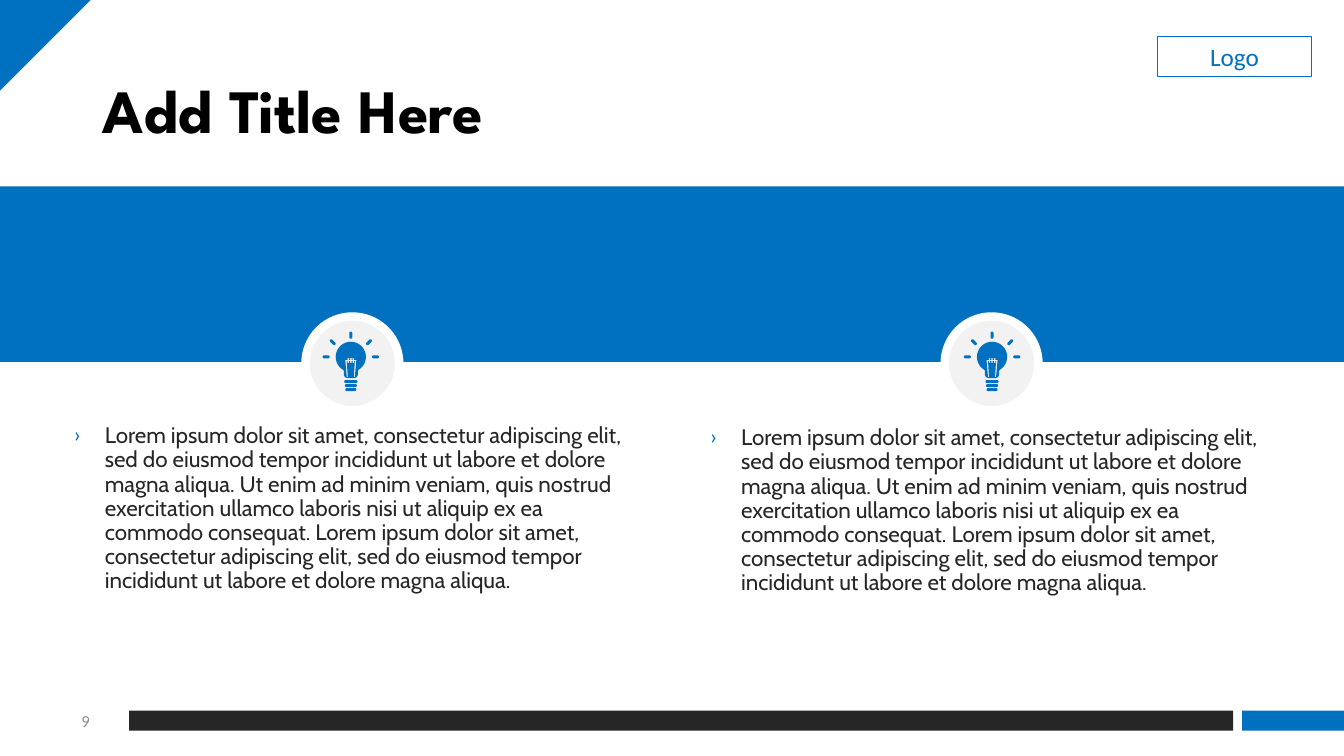
from math import cos, radians, sin

from lxml.etree import SubElement
from pptx import Presentation
from pptx.dml.color import RGBColor
from pptx.enum.shapes import MSO_SHAPE
from pptx.enum.text import MSO_ANCHOR, MSO_AUTO_SIZE, PP_ALIGN
from pptx.oxml.ns import qn
from pptx.util import Inches, Pt

BLUE, DARK, PALE, WHITE = "0070C0", "262626", "F2F2F2", "FFFFFF"
LOREM = (
    "Lorem ipsum dolor sit amet, consectetur adipiscing elit, sed do eiusmod tempor "
    "incididunt ut labore et dolore magna aliqua. Ut enim ad minim veniam, quis nostrud "
    "exercitation ullamco laboris nisi ut aliquip ex ea commodo consequat. Lorem ipsum "
    "dolor sit amet, consectetur adipiscing elit, sed do eiusmod tempor incididunt ut "
    "labore et dolore magna aliqua."
)


def paint(color_format, color):
    color_format.rgb = RGBColor.from_string(color)


def write(shape, text, font, size, color, align=PP_ALIGN.LEFT):
    frame = shape.text_frame
    frame.word_wrap = True
    frame.auto_size = MSO_AUTO_SIZE.NONE
    para = frame.paragraphs[0]
    para.text = text
    para.alignment = align
    para.font.name = font
    para.font.size = Pt(size)
    paint(para.font.color, color)
    return para


deck = Presentation()
deck.slide_width, deck.slide_height = Inches(13.33), Inches(7.5)
page = deck.slides.add_slide(deck.slide_layouts[3])
shapes = page.shapes
title, left_body, right_body = page.placeholders

blocks = [
    (MSO_SHAPE.RIGHT_TRIANGLE, 0, 0, 0.9, 0.9, BLUE),
    (MSO_SHAPE.RECTANGLE, 1.28, 7.05, 10.95, 0.2, DARK),
    (MSO_SHAPE.RECTANGLE, 12.32, 7.05, 1.01, 0.2, BLUE),
    (MSO_SHAPE.RECTANGLE, 0, 1.85, 13.33, 1.74, BLUE),
    (MSO_SHAPE.OVAL, 9.37, 3.14, 0.93, 0.93, PALE),
    (MSO_SHAPE.OVAL, 3.03, 3.14, 0.93, 0.93, PALE),
]
for kind, left, top, width, height, color in blocks:
    block = shapes.add_shape(kind, Inches(left), Inches(top), Inches(width), Inches(height))
    block.shadow.inherit = False
    block.fill.solid()
    paint(block.fill.fore_color, color)
    if kind == MSO_SHAPE.OVAL:
        paint(block.line.color, WHITE)
        block.line.width = Pt(6)
    else:
        block.line.fill.background()
    if kind == MSO_SHAPE.RIGHT_TRIANGLE:
        block.rotation = 90

logo = shapes.add_shape(
    MSO_SHAPE.RECTANGLE, Inches(11.48), Inches(0.36), Inches(1.53), Inches(0.4)
)
logo.shadow.inherit = False
logo.fill.background()
paint(logo.line.color, BLUE)
logo.line.width = Pt(0.75)
write(logo, "Logo", "Calibri", 18, BLUE, PP_ALIGN.CENTER)

title.left, title.top = Inches(0.92), Inches(0.4)
title.width, title.height = Inches(11.5), Inches(1.45)
title.text_frame.vertical_anchor = MSO_ANCHOR.MIDDLE
heading = write(title, "Add Title Here", "League Spartan", 44, "000000")
heading.line_spacing = 0.9
heading.font.bold = True

for body, left, top in [(left_body, 0.63, 4.16), (right_body, 6.94, 4.18)]:
    body.left, body.top = Inches(left), Inches(top)
    body.width, body.height = Inches(5.78), Inches(2.09)
    para = body.text_frame.paragraphs[0]
    para.line_spacing = 0.9
    para.space_before = Pt(10)
    properties = para._p.get_or_add_pPr()
    properties.set("marL", str(Inches(0.31)))
    properties.set("indent", str(-Inches(0.31)))
    bullet_color = SubElement(properties, qn("a:buClr"))
    SubElement(bullet_color, qn("a:srgbClr"), val=BLUE)
    SubElement(properties, qn("a:buFont"), typeface="Calibri")
    SubElement(properties, qn("a:buChar"), char="›")
    write(body, LOREM, "Cabin", 16, DARK)

number = shapes.add_textbox(Inches(0.45), Inches(6.95), Inches(0.54), Inches(0.4))
number.text_frame.vertical_anchor = MSO_ANCHOR.MIDDLE
write(number, "9", "Calibri", 12, "8C8C8C", PP_ALIGN.RIGHT)

glass = [(15 * cos(radians(a)), 15 * sin(radians(a))) for a in range(120, 421, 10)]
neck = [(7, 14), (7, 18), (6, 20), (4, 21), (-4, 21), (-6, 20), (-7, 18), (-7, 14)]
ticks = (-2.5, 0, 2.5)
filament = [(-5.5, 3)]
for tick in ticks:
    filament += [(tick - 0.7, 3), (tick - 0.7, 1), (tick + 0.7, 1), (tick + 0.7, 3)]
filament += [(5.5, 3), (4, 20), (3, 20), (4, 4)]
for tick in reversed(ticks):
    filament += [(tick + 0.7, 4), (tick + 0.7, 6), (tick - 0.7, 6), (tick - 0.7, 4)]
filament += [(-4, 4), (-3, 20), (-4, 20)]
outlines = [glass + neck, filament]

pills = [
    (-24.5, 0, 7, 0), (24.5, 0, 7, 0), (0, -21.5, 7, 90),
    (18, -14.5, 7, -45), (-18, -14.5, 7, 45),
    (0, 24.5, 13, 0), (0, 28.5, 12, 0), (0, 32.5, 11, 0),
]
for x, y, length, tilt in pills:
    outline = []
    for side, start in [(1, -90), (-1, 90)]:
        for angle in range(start, start + 181, 30):
            along = side * (length / 2 - 1.5) + 1.5 * cos(radians(angle))
            across = 1.5 * sin(radians(angle))
            turn = radians(tilt)
            outline.append((
                x + along * cos(turn) - across * sin(turn),
                y + along * sin(turn) + across * cos(turn),
            ))
    outlines.append(outline)

for center_x, center_y in [(3.48, 3.54), (9.84, 3.54)]:
    contours = [
        [(Inches(center_x + x / 100), Inches(center_y + y / 100)) for x, y in outline]
        for outline in outlines
    ]
    builder = shapes.build_freeform(*contours[0][0])
    for contour in contours:
        if contour is not contours[0]:
            builder.move_to(*contour[0])
        builder.add_line_segments(contour[1:], close=True)
    bulb = builder.convert_to_shape()
    bulb.shadow.inherit = False
    bulb.fill.solid()
    paint(bulb.fill.fore_color, BLUE)
    bulb.line.fill.background()

deck.save("out.pptx")
